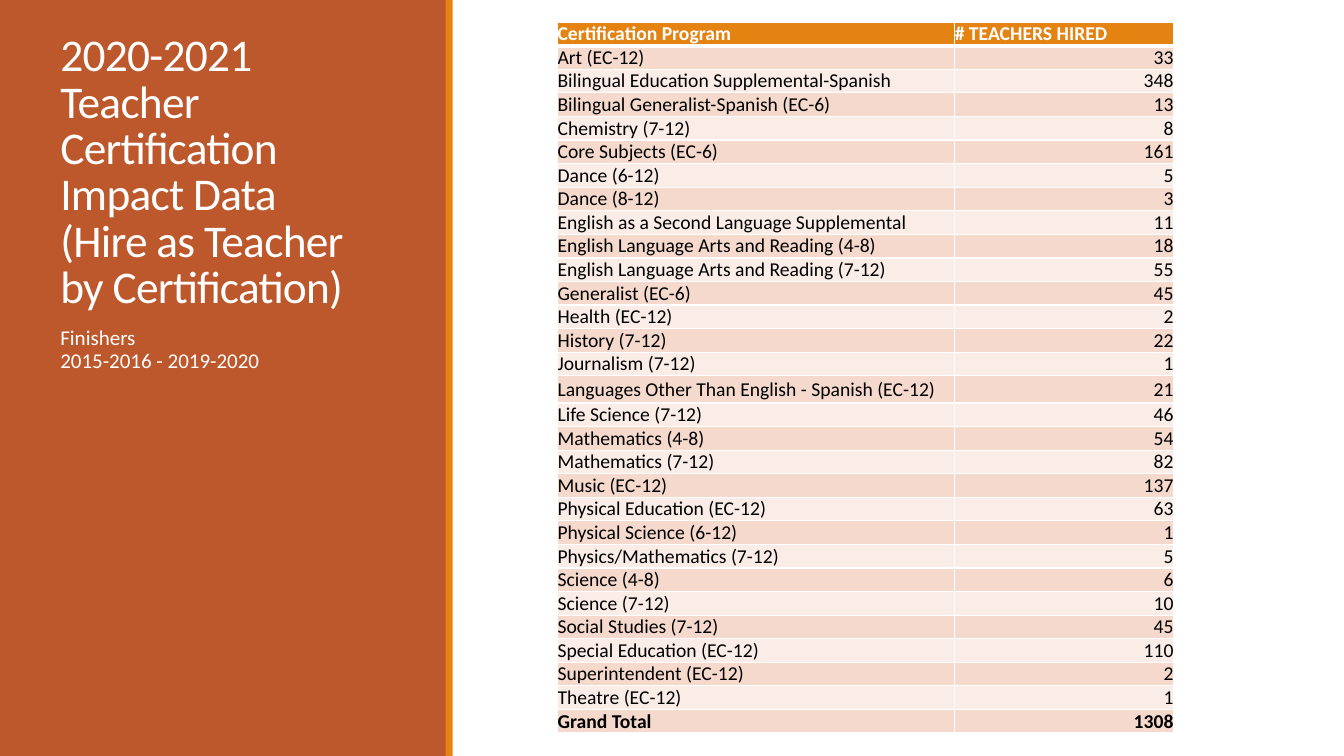
from lxml import etree
from pptx import Presentation
from pptx.dml.color import RGBColor
from pptx.enum import shapes, text
from pptx.oxml.ns import qn
from pptx.util import Inches, Pt

RUST = RGBColor(0xBD, 0x58, 0x2C)
ORANGE = RGBColor(0xE4, 0x83, 0x12)
PEACH = RGBColor(0xF5, 0xD9, 0xCC)
PALE_PEACH = RGBColor(0xFA, 0xED, 0xE7)
WHITE = RGBColor(0xFF, 0xFF, 0xFF)
BLACK = RGBColor(0, 0, 0)

HEADINGS = ("Certification Program", "# TEACHERS HIRED")
HIRES = [
    ("Art (EC-12)", 33),
    ("Bilingual Education Supplemental-Spanish", 348),
    ("Bilingual Generalist-Spanish (EC-6)", 13),
    ("Chemistry (7-12)", 8),
    ("Core Subjects (EC-6)", 161),
    ("Dance (6-12)", 5),
    ("Dance (8-12)", 3),
    ("English as a Second Language Supplemental", 11),
    ("English Language Arts and Reading (4-8)", 18),
    ("English Language Arts and Reading (7-12)", 55),
    ("Generalist (EC-6)", 45),
    ("Health (EC-12)", 2),
    ("History (7-12)", 22),
    ("Journalism (7-12)", 1),
    ("Languages Other Than English - Spanish (EC-12)", 21),
    ("Life Science (7-12)", 46),
    ("Mathematics (4-8)", 54),
    ("Mathematics (7-12)", 82),
    ("Music (EC-12)", 137),
    ("Physical Education (EC-12)", 63),
    ("Physical Science (6-12)", 1),
    ("Physics/Mathematics (7-12)", 5),
    ("Science (4-8)", 6),
    ("Science (7-12)", 10),
    ("Social Studies (7-12)", 45),
    ("Special Education (EC-12)", 110),
    ("Superintendent (EC-12)", 2),
    ("Theatre (EC-12)", 1),
    ("Grand Total", 1308),
]
TALL_ROW = 15


def apply(target, formats):
    for name, value in formats.items():
        setattr(target, name, value)


class HiringSlide:
    font_name = "Calibri"

    def __init__(self, slide):
        self.slide = slide

    def wording(self, paragraph, words, size, color, bold=False, tracking=0):
        """Fill a paragraph with styled words; tracking is in 1/100 point."""
        paragraph.text = words
        for run in paragraph.runs:
            apply(run.font, {"name": self.font_name, "size": Pt(size), "bold": bold})
            run.font.color.rgb = color
            if tracking:
                run._r.get_or_add_rPr().set("spc", str(tracking))

    def panel(self, left, width, color):
        panel = self.slide.shapes.add_shape(
            shapes.MSO_SHAPE.RECTANGLE, Inches(left), 0, Inches(width), Inches(7.5))
        panel.shadow.inherit = False
        panel.fill.solid()
        panel.fill.fore_color.rgb = color
        panel.line.fill.background()

    def label(self, top, height, words, size, spacing, anchor, tracking=0):
        frame = self.slide.shapes.add_textbox(
            Inches(0.5), Inches(top), Inches(3.5), Inches(height)).text_frame
        apply(frame, {"word_wrap": True, "vertical_anchor": anchor,
                      "margin_right": Inches(0.2)})
        paragraph = frame.paragraphs[0]
        paragraph.line_spacing = spacing
        self.wording(paragraph, words, size, WHITE, tracking=tracking)

    def borders(self, cell, widths):
        """Draw white cell borders; widths maps the sides L, R, T, B to points."""
        properties = cell._tc.get_or_add_tcPr()
        for side, width in widths.items():
            line = etree.SubElement(properties, qn(f"a:ln{side}"), w=str(Pt(width)))
            fill = etree.SubElement(line, qn("a:solidFill"))
            etree.SubElement(fill, qn("a:srgbClr"), val=str(WHITE))

    def cell(self, cell, words, fill, color, bold, align, widths):
        apply(cell, {"margin_left": 0, "margin_right": 0, "margin_top": 0,
                     "margin_bottom": 0,
                     "vertical_anchor": text.MSO_ANCHOR.MIDDLE})
        self.borders(cell, widths)
        cell.fill.solid()
        cell.fill.fore_color.rgb = fill
        paragraph = cell.text_frame.paragraphs[0]
        paragraph.alignment = align
        self.wording(paragraph, words, 14, color, bold)

    def hires_table(self):
        records = [HEADINGS, *HIRES]
        table = self.slide.shapes.add_table(
            len(records), 2, Inches(5.53), Inches(0.22), Inches(6.11), Inches(7.04)).table
        for column, width in zip(table.columns, (3.94, 2.17)):
            column.width = Inches(width)
        for r, record in enumerate(records):
            table.rows[r].height = Inches(0.27 if r == TALL_ROW else 0.22)
            header = r == 0
            fill = ORANGE if header else PEACH if r % 2 else PALE_PEACH
            widths = {"L": 1, "R": 1, "T": 3 if r == 1 else 1, "B": 3 if header else 1}
            for c, value in enumerate(record):
                right = c == 1 and not header
                self.cell(table.cell(r, c), str(value), fill,
                          WHITE if header else BLACK,
                          header or record[0] == "Grand Total",
                          text.PP_ALIGN.RIGHT if right else text.PP_ALIGN.LEFT, widths)


def main():
    deck = Presentation()
    apply(deck, {"slide_width": Inches(13.33), "slide_height": Inches(7.5)})
    hiring = HiringSlide(deck.slides.add_slide(deck.slide_layouts[6]))
    hiring.panel(0, 4.43, RUST)
    hiring.panel(4.42, 0.07, ORANGE)
    hiring.label(0.65, 2.5,
                 "2020-2021\nTeacher Certification Impact Data \n"
                 "(Hire as Teacher by Certification)",
                 32.4, 0.85, text.MSO_ANCHOR.BOTTOM, tracking=-50)
    hiring.label(3.2, 3.7, "Finishers\n2015-2016 - 2019-2020",
                 15, 0.9, text.MSO_ANCHOR.TOP)
    hiring.hires_table()
    deck.save("out.pptx")


if __name__ == "__main__":
    main()
